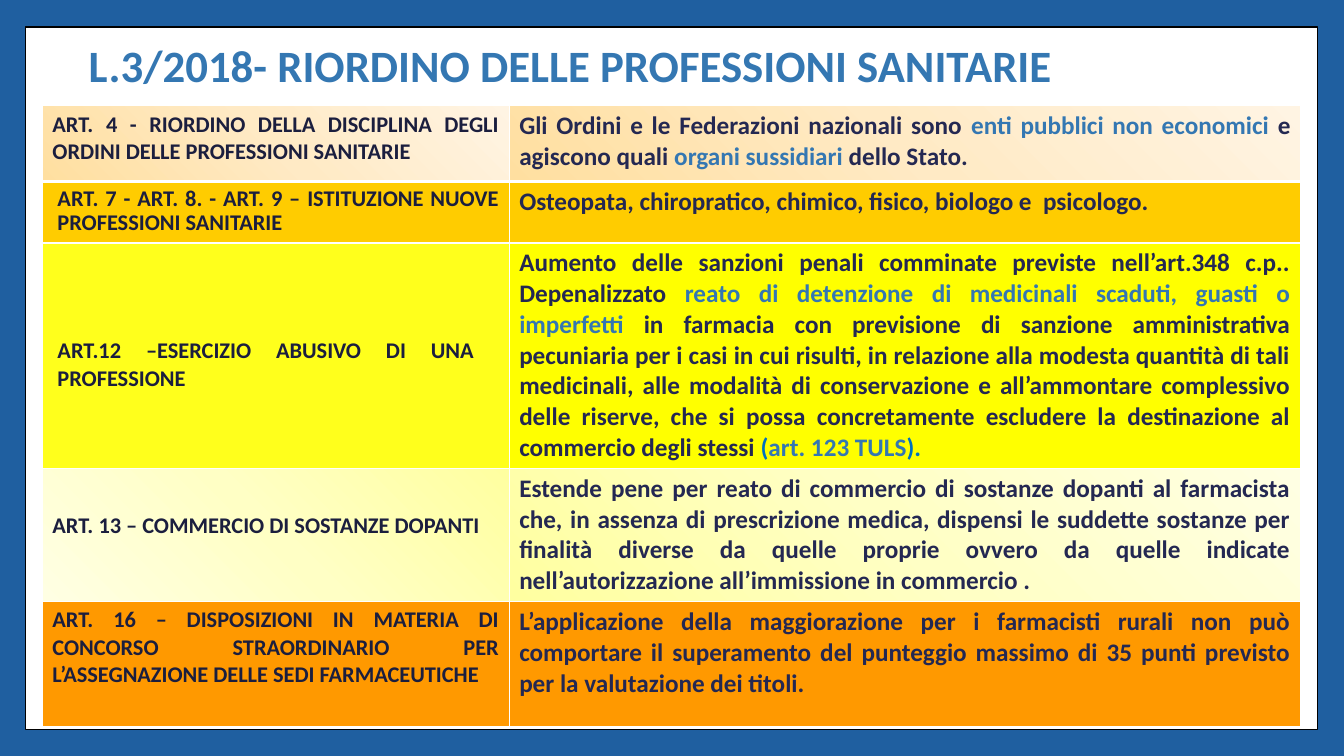
from dataclasses import dataclass
from pptx import Presentation
from pptx.dml.color import RGBColor
from pptx.enum.shapes import MSO_SHAPE
from pptx.enum.text import MSO_ANCHOR, PP_ALIGN
from pptx.oxml import parse_xml
from pptx.oxml.ns import nsdecls
from pptx.util import Inches, Pt


@dataclass(frozen=True)
class Theme:
    font: str = "Calibri"
    blue: str = "1F5FA0"
    white: str = "FFFFFF"
    black: str = "000000"
    accent: str = "3477B2"
    link: str = "0070C0"
    label: str = "1B1E3E"
    body: str = "242852"
    gold: str = "FFCC00"
    yellow: str = "FFFF00"
    orange: str = "FF9900"
    peach: tuple = ("FFDFA0", "FFEAC5", "FFF4E3")
    lemon: tuple = ("FFFFA0", "FFFFC5", "FFFFE3")
    head: int = 32
    large: int = 18
    small: int = 16


THEME = Theme()
RADIAL = '<a:path path="circle"><a:fillToRect t="100000" r="100000"/></a:path>'
SLANT = '<a:lin ang="8100000" scaled="0"/>'


def solid(color, alpha=100):
    return (f'<a:solidFill {nsdecls("a")}><a:srgbClr val="{color}">'
            f'<a:alpha val="{alpha * 1000}"/></a:srgbClr></a:solidFill>')


def blend(colors, shade=RADIAL):
    stops = "".join(f'<a:gs pos="{i * 50000}"><a:srgbClr val="{color}"/></a:gs>'
                    for i, color in enumerate(colors))
    return (f'<a:gradFill {nsdecls("a")} rotWithShape="1">'
            f'<a:gsLst>{stops}</a:gsLst>{shade}</a:gradFill>')


class Deck:
    def __init__(self, theme):
        self.theme = theme
        self.deck = Presentation()
        self.deck.slide_width = Inches(13.33)
        self.deck.slide_height = Inches(7.5)
        self.slide = self.deck.slides.add_slide(self.deck.slide_layouts[5])
        ground = self.slide.background.fill
        ground.solid()
        ground.fore_color.rgb = RGBColor.from_string(theme.blue)

    def text(self, para, words, size, color):
        run = para.add_run()
        run.text = words
        font = run.font
        font.name, font.size, font.bold = self.theme.font, Pt(size), True
        font.color.rgb = RGBColor.from_string(color)

    def frame(self, left, top, width, height):
        box = self.slide.shapes.add_shape(
            MSO_SHAPE.RECTANGLE, *map(Inches, (left, top, width, height)))
        box.shadow.inherit = False
        box.fill.solid()
        box.fill.fore_color.rgb = RGBColor.from_string(self.theme.white)
        box.line.color.rgb = RGBColor.from_string(self.theme.black)
        box.line.width = Pt(1)
        self.slide.shapes.title.element.addprevious(box.element)

    def title(self, words, left, top, width, height):
        box = self.slide.shapes.title
        box.left, box.top, box.width, box.height = map(
            Inches, (left, top, width, height))
        box.text_frame.word_wrap = True
        box.text_frame.vertical_anchor = MSO_ANCHOR.MIDDLE
        para = box.text_frame.paragraphs[0]
        para.alignment = PP_ALIGN.LEFT
        para.line_spacing = 0.9
        self.text(para, words, self.theme.head, self.theme.accent)

    def edge(self, cell, top, bottom):
        props = cell._tc.get_or_add_tcPr()
        sides = (("L", 1), ("R", 1), ("T", top), ("B", bottom))
        for i, (side, width) in enumerate(sides):
            props.insert(i, parse_xml(
                f'<a:ln{side} {nsdecls("a")} w="{Pt(width)}">'
                f'{solid(self.theme.white)}</a:ln{side}>'))

    def cell(self, cell, runs, size, fill, left=0.1, top=0.05, spacing=None):
        cell.margin_left, cell.margin_right = Inches(left), Inches(0.1)
        cell.margin_top, cell.margin_bottom = Inches(top), Inches(0.05)
        cell.vertical_anchor = MSO_ANCHOR.TOP
        para = cell.text_frame.paragraphs[0]
        para.alignment = PP_ALIGN.JUSTIFY
        if spacing:
            para.line_spacing = spacing
        for words, color in runs:
            self.text(para, words, size, color)
        cell._tc.get_or_add_tcPr().append(parse_xml(fill))

    def table(self, rows, left, top, widths, heights):
        grid = self.slide.shapes.add_table(
            len(rows), len(widths), Inches(left), Inches(top),
            Inches(sum(widths)), Inches(sum(heights))).table
        grid.first_row = grid.horz_banding = False
        for column, width in zip(grid.columns, widths):
            column.width = Inches(width)
        for i, (label, runs, fills, style) in enumerate(rows):
            grid.rows[i].height = Inches(heights[i])
            self.cell(grid.cell(i, 0), [(label, self.theme.label)],
                      self.theme.small, fills[0], **style)
            self.cell(grid.cell(i, 1), runs, self.theme.large, fills[1])
            for j in range(len(widths)):
                self.edge(grid.cell(i, j), 3 if i == 1 else 1, 3 if i == 0 else 1)

    def save(self):
        self.deck.save("out.pptx")


ROWS = [
    ("ART. 4 - RIORDINO DELLA DISCIPLINA DEGLI ORDINI DELLE PROFESSIONI SANITARIE",
     [("Gli Ordini e le Federazioni nazionali sono ", THEME.body),
      ("enti pubblici non economici ", THEME.accent),
      ("e agiscono quali ", THEME.body),
      ("organi sussidiari ", THEME.accent),
      ("dello Stato.", THEME.body)],
     [blend(THEME.peach)] * 2, {}),
    ("ART. 7 - ART. 8. - ART. 9 – ISTITUZIONE NUOVE PROFESSIONI SANITARIE",
     [("Osteopata, chiropratico, chimico, fisico, biologo e  psicologo.", THEME.body)],
     [solid(THEME.gold)] * 2, {"left": 0.15, "spacing": 0.9}),
    ("ART.12 –ESERCIZIO ABUSIVO DI UNA  PROFESSIONE",
     [("Aumento delle sanzioni penali comminate previste nell’art.348 c.p.. "
       "Depenalizzato ", THEME.body),
      ("reato di detenzione di medicinali scaduti, guasti o imperfetti ", THEME.accent),
      ("in farmacia con previsione di sanzione amministrativa pecuniaria per i casi "
       "in cui risulti, in relazione alla modesta quantità di tali medicinali, alle "
       "modalità di conservazione e all’ammontare complessivo delle riserve, che si "
       "possa concretamente escludere la destinazione al commercio degli stessi ",
       THEME.body),
      ("(", THEME.link), ("art. 123 TULS", THEME.accent), (").", THEME.link)],
     [solid(THEME.yellow, 89), solid(THEME.yellow)], {"left": 0.15, "top": 0.94}),
    ("ART. 13 – COMMERCIO DI SOSTANZE DOPANTI",
     [("Estende pene per reato di commercio di sostanze dopanti al farmacista che, in "
       "assenza di prescrizione medica, dispensi le suddette sostanze per finalità "
       "diverse da quelle proprie ovvero da quelle indicate nell’autorizzazione "
       "all’immissione in commercio .", THEME.body)],
     [blend(THEME.lemon, SLANT), blend(THEME.lemon)], {"top": 0.43}),
    ("ART. 16 – DISPOSIZIONI IN MATERIA DI CONCORSO STRAORDINARIO PER "
     "L’ASSEGNAZIONE DELLE SEDI FARMACEUTICHE",
     [("L’applicazione della maggiorazione per i farmacisti rurali non può comportare "
       "il superamento del punteggio massimo di 35 punti previsto per la valutazione "
       "dei titoli.", THEME.body)],
     [solid(THEME.orange)] * 2, {}),
]


def main():
    deck = Deck(THEME)
    deck.frame(0.25, 0.27, 12.82, 6.97)
    deck.title("L.3/2018- RIORDINO DELLE PROFESSIONI SANITARIE", 0.78, 0.35, 12.2, 0.65)
    deck.table(ROWS, 0.42, 1.05, (4.63, 7.85), (0.75, 0.61, 2.2, 1.3, 1.24))
    deck.save()


if __name__ == "__main__":
    main()
